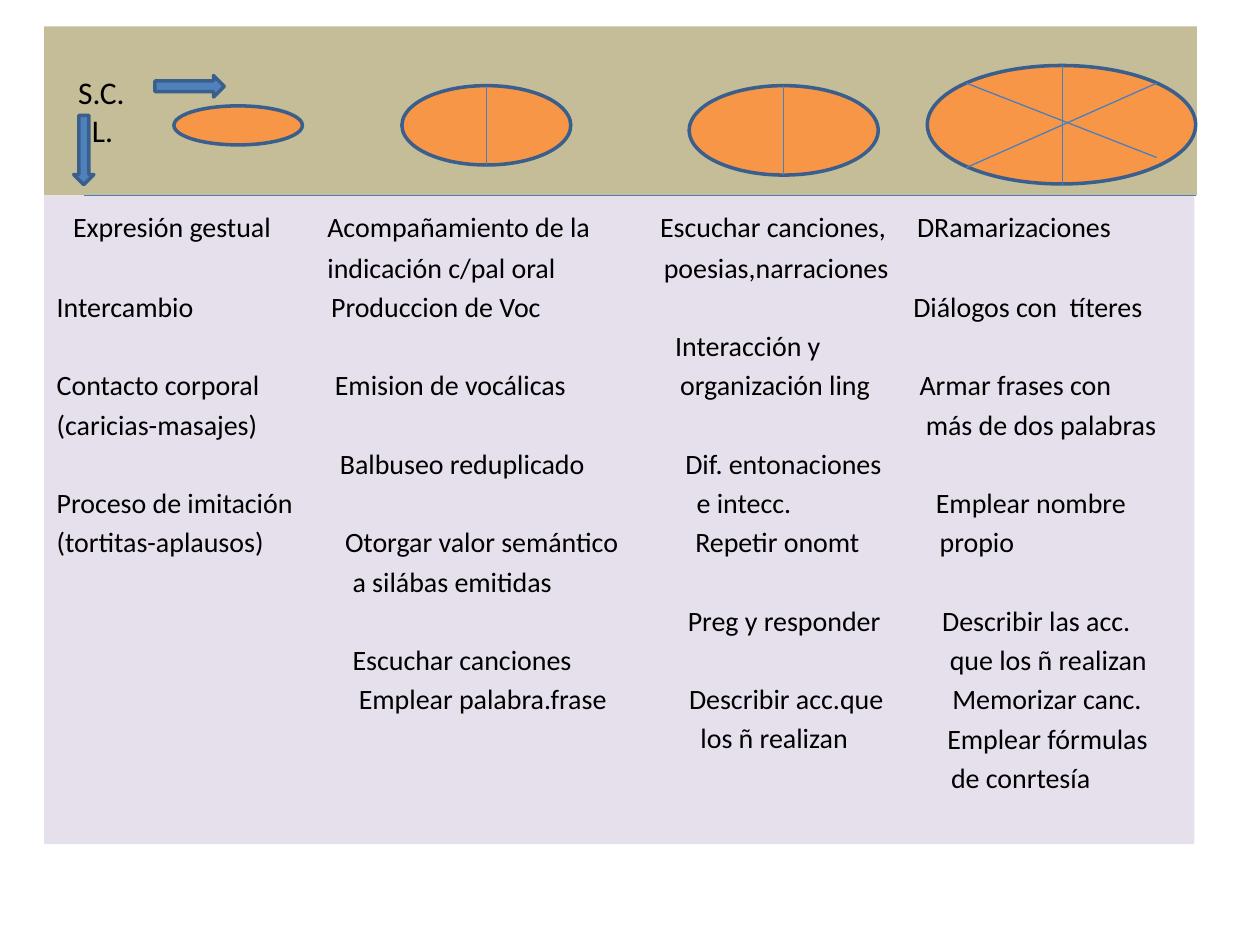
from lxml.etree import SubElement
from pptx import Presentation
from pptx.dml.color import RGBColor
from pptx.enum.shapes import MSO_CONNECTOR, MSO_SHAPE
from pptx.enum.text import MSO_ANCHOR, MSO_AUTO_SIZE, PP_ALIGN
from pptx.oxml.ns import qn
from pptx.util import Inches, Pt

LEFT, TOP, WIDTH, HEIGHT = .35, 1.55, 9.13, 5.15  # body panel
PITCH, LINE = 22.43, 19.2  # points from row to row, and height of a line

# Column offset in the panel, then (row, nudge in inches, wording)
COLUMNS = [
    (0, [(0, .13, "Expresión gestual"), (2, 0, "Intercambio"),
         (4, 0, "Contacto corporal"), (5, 0, "(caricias-masajes)"),
         (7, 0, "Proceso de imitación"), (8, 0, "(tortitas-aplausos)")]),
    (2.15, [(0, 0, "Acompañamiento de la"), (1, 0, "indicación c/pal oral"),
            (2, .03, "Produccion de Voc"), (4, .06, "Emision de vocálicas"),
            (6, .1, "Balbuseo reduplicado"), (8, .14, "Otorgar valor semántico"),
            (9, .2, "a silábas emitidas"), (11, .2, "Escuchar canciones"),
            (12, .25, "Emplear palabra.frase")]),
    (4.79, [(0, 0, "Escuchar canciones,"), (1, .03, "poesias,narraciones"),
            (3, .12, "Interacción y"), (4, .16, "organización ling"),
            (6, .2, "Dif. entonaciones"), (7, .29, "e intecc."),
            (8, .28, "Repetir onomt"), (10, .22, "Preg y responder"),
            (12, .23, "Describir acc.que"), (13, .32, "los ñ realizan")]),
    (6.8, [(0, .03, "DRamarizaciones"), (2, 0, "Diálogos con  títeres"),
           (4, .05, "Armar frases con"), (5, .1, "más de dos palabras"),
           (7, .18, "Emplear nombre"), (8, .21, "propio"),
           (10, .23, "Describir las acc."), (11, .29, "que los ñ realizan"),
           (12, .31, "Memorizar canc."), (13, .27, "Emplear fórmulas"),
           (14, .3, "de conrtesía")]),
]


def paint(target, color):
    target.solid()
    target.fore_color.rgb = RGBColor.from_string(color)


def add_line(frame, index, text, size, margin, before):
    para = frame.add_paragraph() if index else frame.paragraphs[0]
    para.alignment = PP_ALIGN.LEFT
    para.space_before = Pt(before)
    props = para._p.get_or_add_pPr()
    props.set("marL", str(Inches(margin)))
    props.set("indent", "0")
    SubElement(props, qn("a:buNone"))
    span = para.add_run()
    span.text = text
    span.font.name = "Calibri"
    span.font.size = Pt(size)
    paint(span.font.fill, "000000")


deck = Presentation()
deck.slide_width, deck.slide_height = Inches(10), Inches(7.5)
page = deck.slides.add_slide(deck.slide_layouts[1])
title, body = page.placeholders

# Header and body panels
for box, area, color in ((title, (LEFT, .21, 9.15, 1.34), "C4BD97"),
                         (body, (LEFT, TOP, WIDTH, HEIGHT), "E6E0EC")):
    box.left, box.top, box.width, box.height = map(Inches, area)
    paint(box.fill, color)
    box.text_frame.auto_size = MSO_AUTO_SIZE.NONE
    box.text_frame.word_wrap = True

# Axis labels
title.text_frame.vertical_anchor = MSO_ANCHOR.MIDDLE
for index, (label, margin) in enumerate((("S.C.", .17), ("L.", .28))):
    add_line(title.text_frame, index, label, 18, margin, 0)

# Activities: the body holds the first column, text boxes the others
edges = [offset for offset, _ in COLUMNS] + [WIDTH]
for (offset, entries), edge in zip(COLUMNS, edges[1:]):
    box = page.shapes.add_textbox(
        *map(Inches, (LEFT + offset, TOP, edge - offset, HEIGHT))) if offset else body
    frame = box.text_frame
    frame.word_wrap = True
    frame.margin_top = Inches(.11)
    previous = 0
    for index, (row, nudge, text) in enumerate(entries):
        # The heading row is one point taller than the rest
        before = (row - previous) * PITCH - LINE + (index == 1) if index else 0
        add_line(frame, index, text, 16, nudge, before)
        previous = row

# Ovals and axis arrows
OVAL, ARROW = MSO_SHAPE.OVAL, MSO_SHAPE.RIGHT_ARROW
for kind, area, color, turn in (
    (OVAL, (1.38, .84, 1.02, .31), "F79646", 0),
    (OVAL, (7.36, .52, 2.13, .94), "F79646", 0),
    (OVAL, (5.47, .68, 1.5, .71), "F79646", 0),
    (OVAL, (3.19, .68, 1.34, .63), "F79646", 0),
    (ARROW, (.39, 1.11, .55, .16), "4F81BD", 90),
    (ARROW, (1.23, .6, .55, .17), "4F81BD", 0),
):
    shape = page.shapes.add_shape(kind, *map(Inches, area))
    shape.shadow.inherit = False
    shape.rotation = turn
    paint(shape.fill, color)
    paint(shape.line.fill, "3A5F8C")
    shape.line.width = Pt(2)

# Oval dividers and header rule
for ends in (
    (3.86, .68, 3.86, 1.31),
    (6.22, .68, 6.22, 1.39),
    (8.43, .52, 8.43, 1.47),
    (7.67, .66, 9.18, 1.25),
    (9.18, .66, 7.67, 1.33),
    (.67, 1.55, 9.49, 1.55),
):
    line = page.shapes.add_connector(MSO_CONNECTOR.STRAIGHT, *map(Inches, ends))
    paint(line.line.fill, "4B7EBC")
    line.line.width = Pt(.75)
    SubElement(line._element.spPr, qn("a:effectLst"))

deck.save("out.pptx")
